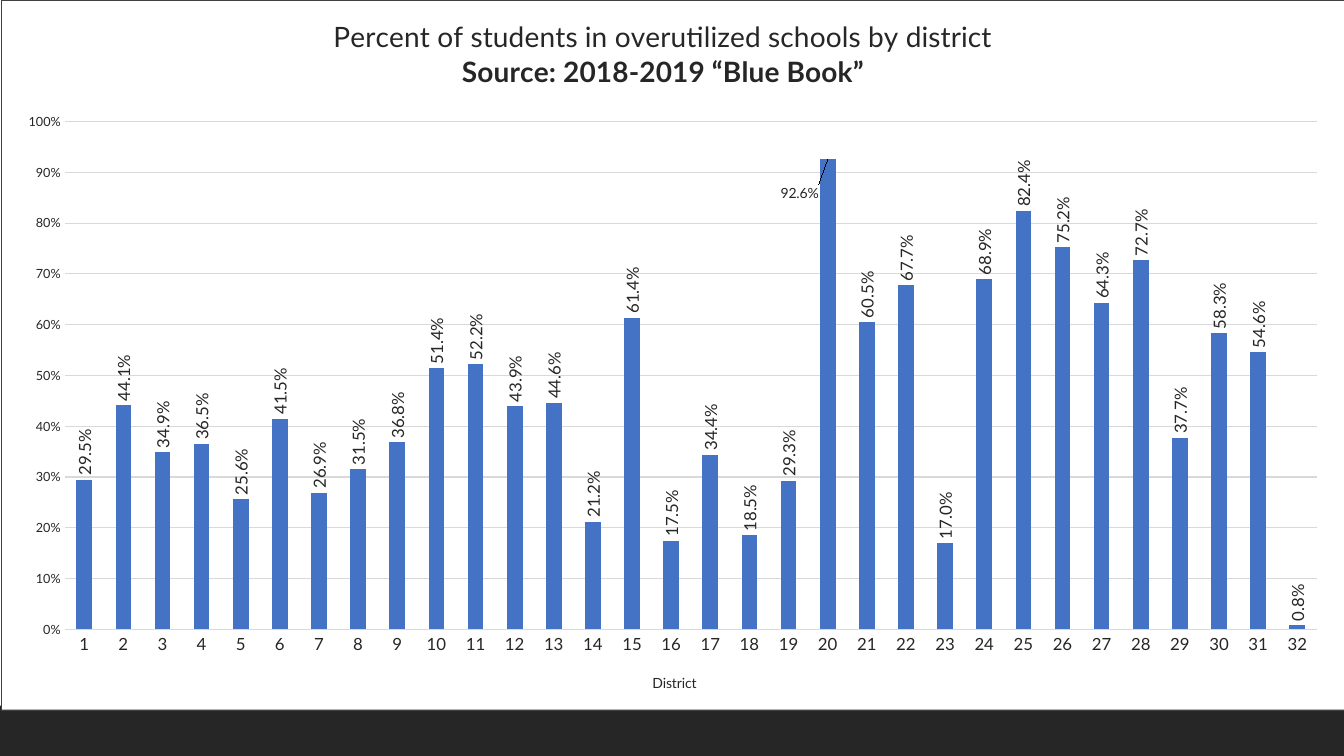
import copy

import lxml.etree
import pptx
import pptx.chart.data
import pptx.dml.color
import pptx.enum.chart
import pptx.enum.shapes
import pptx.oxml.ns
import pptx.util

RGBColor = pptx.dml.color.RGBColor
INK = RGBColor(0x26, 0x26, 0x26)
BAR_BLUE = RGBColor(0x44, 0x72, 0xC4)
RULE_GREY = RGBColor(0xD9, 0xD9, 0xD9)
WHITE = RGBColor(0xFF, 0xFF, 0xFF)
FRAME_GREY = RGBColor(0x40, 0x40, 0x40)

FONT = "Lato"
WIDTH, HEIGHT = pptx.util.Inches(13.33), pptx.util.Inches(7.5)
qn = pptx.oxml.ns.qn

# Percent of students, districts 1 to 32
PERCENTS = [
    29.5, 44.1, 34.9, 36.5, 25.6, 41.5, 26.9, 31.5,
    36.8, 51.4, 52.2, 43.9, 44.6, 21.2, 61.4, 17.5,
    34.4, 18.5, 29.3, 92.6, 60.5, 67.7, 17.0, 68.9,
    82.4, 75.2, 64.3, 72.7, 37.7, 58.3, 54.6, 0.8,
]
MOVED_LABEL = 19  # District 20, whose label sits beside its bar


def style_font(font, size, bold=False, color=INK):
    font.name, font.size, font.bold = FONT, pptx.util.Pt(size), bold
    font.color.rgb = color


def write(paragraph, text, **style):
    run = paragraph.add_run()
    run.text = text
    style_font(run.font, **style)


def place(part, index, **settings):
    """Give a chart part a manual layout, set as shares of the chart."""
    for old in part.findall(qn("c:layout")):
        part.remove(old)
    layout = lxml.etree.Element(qn("c:layout"))
    manual = lxml.etree.SubElement(layout, qn("c:manualLayout"))
    for tag, value in settings.items():
        lxml.etree.SubElement(manual, qn(f"c:{tag}"), val=str(value))
    part.insert(index, layout)


class DistrictSlide:
    def __init__(self, presentation):
        self.slide = presentation.slides.add_slide(presentation.slide_layouts[6])
        self.slide.background.fill.solid()
        self.slide.background.fill.fore_color.rgb = WHITE

    def box(self, left, top, width, height):
        """Turn shares of the slide into lengths."""
        return (int(left * WIDTH), int(top * HEIGHT),
                int(width * WIDTH), int(height * HEIGHT))

    def band(self, *shares):
        band = self.slide.shapes.add_shape(
            pptx.enum.shapes.MSO_SHAPE.RECTANGLE, *self.box(*shares))
        band.shadow.inherit = False
        band.fill.solid()
        band.fill.fore_color.rgb = INK
        band.line.fill.background()

    def column_chart(self, percents, *shares):
        data = pptx.chart.data.CategoryChartData(number_format="0.0%")
        data.categories = [str(n) for n in range(1, len(percents) + 1)]
        data.add_series("Series 1", [round(p / 100, 3) for p in percents])
        chart = self.slide.shapes.add_chart(
            pptx.enum.chart.XL_CHART_TYPE.COLUMN_CLUSTERED,
            *self.box(*shares), data).chart
        style_font(chart.font, 10)
        chart.has_legend = False
        plot = chart.plots[0]
        plot.gap_width, plot.overlap = 150, -27
        plot.vary_by_categories = False
        bars = plot.series[0]
        bars.format.fill.solid()
        bars.format.fill.fore_color.rgb = BAR_BLUE
        place(chart._chartSpace.chart.plotArea, 0, layoutTarget="inner",
              xMode="edge", yMode="edge", x=0.047, y=0.171, w=0.933, h=0.716)
        self.frame(chart)
        return chart

    def frame(self, chart):
        area = lxml.etree.Element(qn("c:spPr"))
        line = lxml.etree.Element(qn("a:ln"), w=str(pptx.util.Pt(0.25)))
        for parent, color in ((area, WHITE), (line, FRAME_GREY)):
            fill = lxml.etree.SubElement(parent, qn("a:solidFill"))
            lxml.etree.SubElement(fill, qn("a:srgbClr"), val=str(color))
        area.append(line)
        chart._chartSpace.chart.addnext(area)

    def heading(self, title, lines, x, y):
        """Fill a chart or axis title with (text, size, bold) lines."""
        frame = title.text_frame
        for number, (text, size, bold) in enumerate(lines):
            paragraph = frame.add_paragraph() if number else frame.paragraphs[0]
            write(paragraph, text, size=size, bold=bold)
        place(title._element, 1, xMode="edge", yMode="edge", x=x, y=y)

    def axes(self, chart):
        no_tick = pptx.enum.chart.XL_TICK_MARK.NONE
        districts, share = chart.category_axis, chart.value_axis
        for axis, size in ((districts, 12), (share, 9)):
            axis.major_tick_mark = axis.minor_tick_mark = no_tick
            style_font(axis.tick_labels.font, size)
        share.minimum_scale, share.maximum_scale, share.major_unit = 0, 1, 0.1
        share.tick_labels.number_format = "0%"
        share.tick_labels.number_format_is_linked = False
        share.format.line.fill.background()
        for line in (districts.format.line, share.major_gridlines.format.line):
            line.color.rgb = RULE_GREY
            line.width = pptx.util.Pt(0.75)

    def value_labels(self, bars, moved, x, y):
        """Show upright values, one of them moved by shares of the chart."""
        outside = pptx.enum.chart.XL_LABEL_POSITION.OUTSIDE_END
        labels = bars.data_labels
        labels.show_value = True
        labels.number_format, labels.number_format_is_linked = "0.0%", False
        labels.position = outside
        style_font(labels.font, 12)
        group = labels._element
        turn = group.find(qn("c:txPr")).find(qn("a:bodyPr"))
        turn.set("rot", "-5400000")
        turn.set("vert", "horz")
        bars.points[moved].data_label.position = outside
        label = group.find(qn("c:dLbl"))
        for tag in ("c:txPr", "c:numFmt"):
            label.insert(1, copy.deepcopy(group.find(qn(tag))))
        place(label, 1, x=x, y=y)


def main():
    presentation = pptx.Presentation()
    presentation.slide_width, presentation.slide_height = WIDTH, HEIGHT
    page = DistrictSlide(presentation)
    page.band(0, 14 / 15, 1, 1 / 15)
    chart = page.column_chart(PERCENTS, 0.001, 0, 0.999, 0.939)
    page.axes(chart)
    page.heading(chart.chart_title, [
        ("Percent of students in overutilized schools by district", 20, False),
        ("Source: 2018-2019 “Blue Book”", 20, True),
    ], x=0.245, y=0.02)
    page.heading(chart.category_axis.axis_title, [("District", 10, False)],
                 x=0.483, y=0.945)
    page.value_labels(chart.plots[0].series[0], MOVED_LABEL, x=-0.021, y=0.065)
    presentation.save("out.pptx")


if __name__ == "__main__":
    main()
